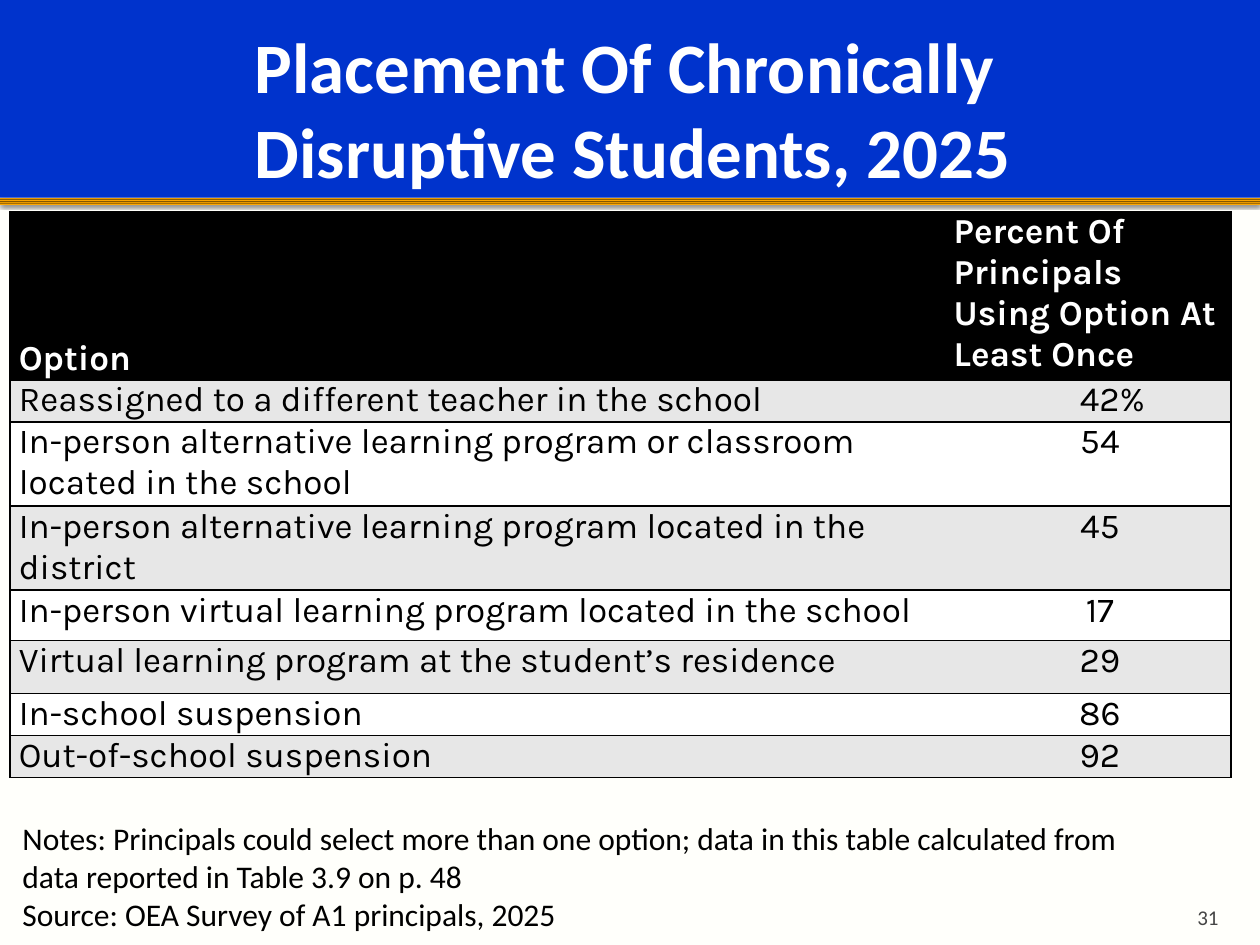
import pptx
import pptx.dml.color
import pptx.enum.shapes
import pptx.enum.text
import pptx.oxml
import pptx.oxml.ns
import pptx.util

Inches = pptx.util.Inches
Pt = pptx.util.Pt
RGBColor = pptx.dml.color.RGBColor
Align = pptx.enum.text.PP_ALIGN
Anchor = pptx.enum.text.MSO_ANCHOR
NAMESPACE = pptx.oxml.ns.nsdecls("a")

BACKGROUND = RGBColor(0xFF, 0xFF, 0xFB)
BLUE = RGBColor(0x00, 0x33, 0xCC)
BROWN = RGBColor(0x82, 0x56, 0x00)
GOLD = RGBColor(0xFF, 0xA8, 0x00)
BLACK = RGBColor(0x00, 0x00, 0x00)
WHITE = RGBColor(0xFF, 0xFF, 0xFF)
BAND = RGBColor(0xE7, 0xE7, 0xE7)
GRAY = RGBColor(0x45, 0x45, 0x45)

HEADER = ("Option", "Percent Of Principals\nUsing Option At Least Once")
# Option, percent of principals, row height in inches
OPTIONS = [
    ("Reassigned to a different teacher in the school", "42%", 0.29),
    ("In-person alternative learning program or classroom located in the school",
     "54", 0.59),
    ("In-person alternative learning program located in the district", "45", 0.59),
    ("In-person virtual learning program located in the school", "17", 0.4),
    ("Virtual learning program at the student’s residence", "29", 0.42),
    ("In-school suspension", "86", 0.29),
    ("Out-of-school suspension", "92", 0.29),
]


def format_text(text_frame, size, font_name, color, bold=False, align=Align.LEFT):
    for paragraph in text_frame.paragraphs:
        paragraph.alignment = align
        for run in paragraph.runs:
            run.font.size = Pt(size)
            run.font.name = font_name
            run.font.bold = bold
            run.font.color.rgb = color


def add_text(slide, box, text, size, color, anchor=Anchor.TOP, **style):
    shape = slide.shapes.add_textbox(*map(Inches, box))
    text_frame = shape.text_frame
    text_frame.word_wrap = True
    text_frame.vertical_anchor = anchor
    text_frame.text = text
    format_text(text_frame, size, "Calibri", color, **style)
    return text_frame


def add_bar(slide, top, height):
    shape = slide.shapes.add_shape(
        pptx.enum.shapes.MSO_SHAPE.RECTANGLE, 0, Inches(top), Inches(10), Inches(height))
    shape.shadow.inherit = False
    shape.line.fill.background()
    return shape


def add_gold_stripe(slide):
    shape = add_bar(slide, 1.57, 0.05)
    # Alternating brown and gold bands
    shape.fill.gradient()
    shape.fill.gradient_angle = 270
    stops = "".join(
        f'<a:gs pos="{position * 1000}"><a:srgbClr val="{GOLD if index % 2 else BROWN}"/></a:gs>'
        for index, position in enumerate((0, 13, 28, 43, 58, 72, 87, 100)))
    properties = shape._element.spPr
    old_stops = properties.find(".//" + pptx.oxml.ns.qn("a:gsLst"))
    old_stops.getparent().replace(
        old_stops, pptx.oxml.parse_xml(f"<a:gsLst {NAMESPACE}>{stops}</a:gsLst>"))
    # Soft shadow below the stripe
    effects = properties.find(pptx.oxml.ns.qn("a:effectLst"))
    effects.append(pptx.oxml.parse_xml(
        f'<a:outerShdw {NAMESPACE} blurRad="{Pt(2.5)}" dist="{Pt(0.8)}" dir="5400000" '
        'rotWithShape="0"><a:srgbClr val="000000"><a:alpha val="60000"/></a:srgbClr>'
        "</a:outerShdw>"))


def set_borders(cell, drawn_sides):
    properties = cell._tc.get_or_add_tcPr()
    for side in "LRTB":
        if side in drawn_sides:
            line = f'<a:solidFill><a:srgbClr val="{BLACK}"/></a:solidFill>'
        else:
            line = "<a:noFill/>"
        properties.append(pptx.oxml.parse_xml(
            f'<a:ln{side} {NAMESPACE} w="{Pt(1)}">{line}</a:ln{side}>'))


def fill_cell(cell, text, fill, color, sides, bold=False, align=Align.LEFT, left=0.07):
    cell.margin_left, cell.margin_right = Inches(left), Inches(0.07)
    cell.margin_top = cell.margin_bottom = 0
    set_borders(cell, sides)
    cell.fill.solid()
    cell.fill.fore_color.rgb = fill
    cell.text_frame.text = text
    format_text(cell.text_frame, 20, "Karla", color, bold, align)


def add_options_table(slide):
    heights = [0.75] + [option[2] for option in OPTIONS]
    table = slide.shapes.add_table(
        len(heights), 2, Inches(0.08), Inches(1.68), Inches(9.69),
        Inches(sum(heights))).table
    table.first_row = table.horz_banding = False
    for column, width in zip(table.columns, (7.42, 2.27)):
        column.width = Inches(width)
    for row, height in zip(table.rows, heights):
        row.height = Inches(height)

    # Header row
    for column, (text, sides) in enumerate(zip(HEADER, ("LTB", "RTB"))):
        fill_cell(table.cell(0, column), text, BLACK, WHITE, sides, bold=True)
    table.cell(0, 0).vertical_anchor = Anchor.BOTTOM

    # Option rows; the wider margin lines the percent sign up past the digits
    for row, (option, percent, _) in enumerate(OPTIONS, start=1):
        fill = BAND if row % 2 else WHITE
        fill_cell(table.cell(row, 0), option, fill, BLACK, "LTB")
        fill_cell(table.cell(row, 1), percent, fill, BLACK, "RTB", align=Align.CENTER,
                  left=0.46 if percent.endswith("%") else 0.26)


def main():
    presentation = pptx.Presentation()
    presentation.slide_width, presentation.slide_height = Inches(10), Inches(7.5)
    slide = presentation.slides.add_slide(presentation.slide_layouts[6])
    slide.background.fill.solid()
    slide.background.fill.fore_color.rgb = BACKGROUND

    # Title band
    add_gold_stripe(slide)
    band = add_bar(slide, 0, 1.57)
    band.fill.solid()
    band.fill.fore_color.rgb = BLUE
    title = add_text(slide, (0.5, 0.17, 9, 1.37),
                     "Placement Of Chronically \vDisruptive Students, 2025", 40.5, WHITE,
                     Anchor.MIDDLE, bold=True, align=Align.CENTER)
    title.margin_right = Inches(0.05)

    add_options_table(slide)

    # Page number and notes
    number = add_text(slide, (8.97, 7.08, 0.8, 0.3), "31", 12, GRAY, Anchor.BOTTOM,
                      align=Align.RIGHT)
    number.margin_bottom = 0
    add_text(slide, (0.08, 6.45, 8.92, 1.01),
             "Notes: Principals could select more than one option; data in this table "
             "calculated from data reported in Table 3.9 on p. 48\n"
             "Source: OEA Survey of A1 principals, 2025", 18, BLACK)

    presentation.save("out.pptx")


if __name__ == "__main__":
    main()
